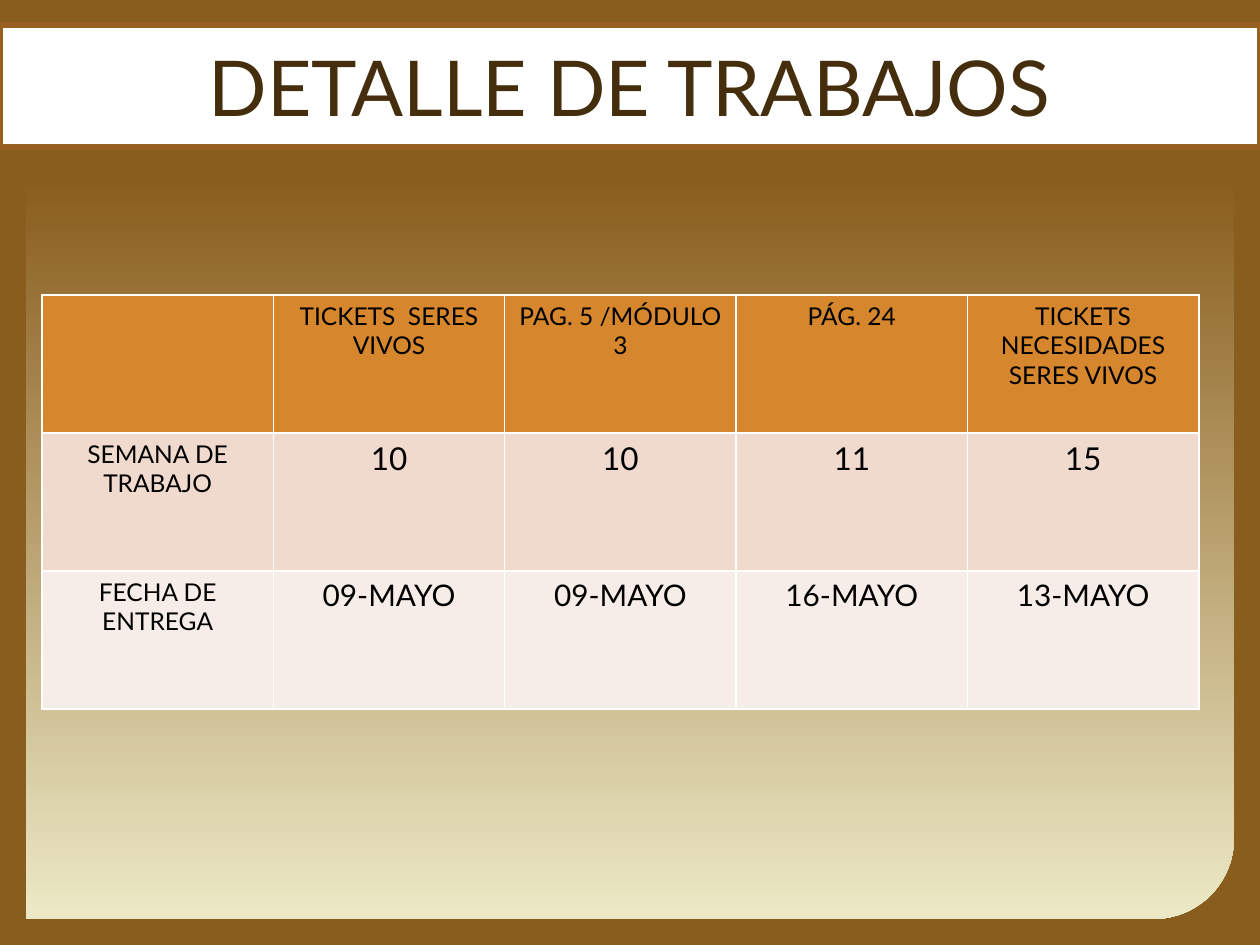
from lxml import etree
from pptx import Presentation, util as u
from pptx.dml.color import RGBColor
from pptx.enum import shapes, text
from pptx.oxml.ns import qn

TITLE = "DETALLE DE TRABAJOS"
ROWS = [
    ["", "TICKETS  SERES VIVOS", "PAG. 5 /MÓDULO 3", "PÁG. 24",
     "TICKETS NECESIDADES SERES VIVOS"],
    ["SEMANA DE TRABAJO", "10", "10", "11", "15"],
    ["FECHA DE ENTREGA", "09-MAYO", "09-MAYO", "16-MAYO", "13-MAYO"],
]
FILLS = ["D6862D", "F0D9CD", "F7EDE8"]
SIZES = [14, 18, 17]  # body size of each row
LABEL = 14            # size of the first column
FONT = "Lato"
BROWN, CREAM, WHITE = "895D1D", "ECE9C6", "FFFFFF"


def px(n):
    return u.Emu(n * 914400 // 126)


def rgb(code):
    return RGBColor.from_string(code)


def paint(fill, code):
    fill.solid()
    fill.fore_color.rgb = rgb(code)


def write(frame, words, size, color):
    para = frame.paragraphs[0]
    para.text = words
    para.alignment = text.PP_ALIGN.CENTER
    para.font.name, para.font.size = FONT, u.Pt(size)
    para.font.color.rgb = rgb(color)


def border(cell, code):
    props = cell._tc.get_or_add_tcPr()
    for spot, side in enumerate(("lnL", "lnR", "lnT", "lnB")):
        line = etree.Element(qn("a:" + side), w=str(u.Pt(1)))
        solid = etree.SubElement(line, qn("a:solidFill"))
        etree.SubElement(solid, qn("a:srgbClr"), val=code)
        props.insert(spot, line)


def add_shape(slide, kind, *box):
    shape = slide.shapes.add_shape(kind, *map(px, box))
    shape.shadow.inherit = False
    return shape


deck = Presentation()
deck.slide_width, deck.slide_height = px(1260), px(945)
slide = deck.slides.add_slide(deck.slide_layouts[6])
paint(slide.background.fill, BROWN)

# Gradient panel
panel = add_shape(slide, shapes.MSO_SHAPE.ROUND_2_DIAG_RECTANGLE,
                  26, 26, 1208, 893)
panel.adjustments[0], panel.adjustments[1] = 0.09, 0
panel.line.fill.background()
panel.fill.gradient()
panel.fill.gradient_angle = 270
for stop, (spot, code) in zip(panel.fill.gradient_stops,
                              [(0.17, BROWN), (1, CREAM)]):
    stop.position, stop.color.rgb = spot, rgb(code)

# Table of works
cols = len(ROWS[0])
table = slide.shapes.add_table(len(ROWS), cols, px(42), px(295),
                               px(1157), px(414)).table
for r, row in enumerate(ROWS):
    for c, words in enumerate(row):
        cell = table.cell(r, c)
        paint(cell.fill, FILLS[r])
        border(cell, WHITE)
        write(cell.text_frame, words, SIZES[r] if c else LABEL, "000000")
        cell.text_frame.paragraphs[0].font.bold = False

# Title band
band = add_shape(slide, shapes.MSO_SHAPE.RECTANGLE, 0, 25, 1260, 122)
paint(band.fill, WHITE)
band.line.color.rgb = rgb("975F20")
band.line.width = u.Pt(3)
band.text_frame.vertical_anchor = text.MSO_ANCHOR.MIDDLE
write(band.text_frame, TITLE, 44, "452E0E")

deck.save("out.pptx")
